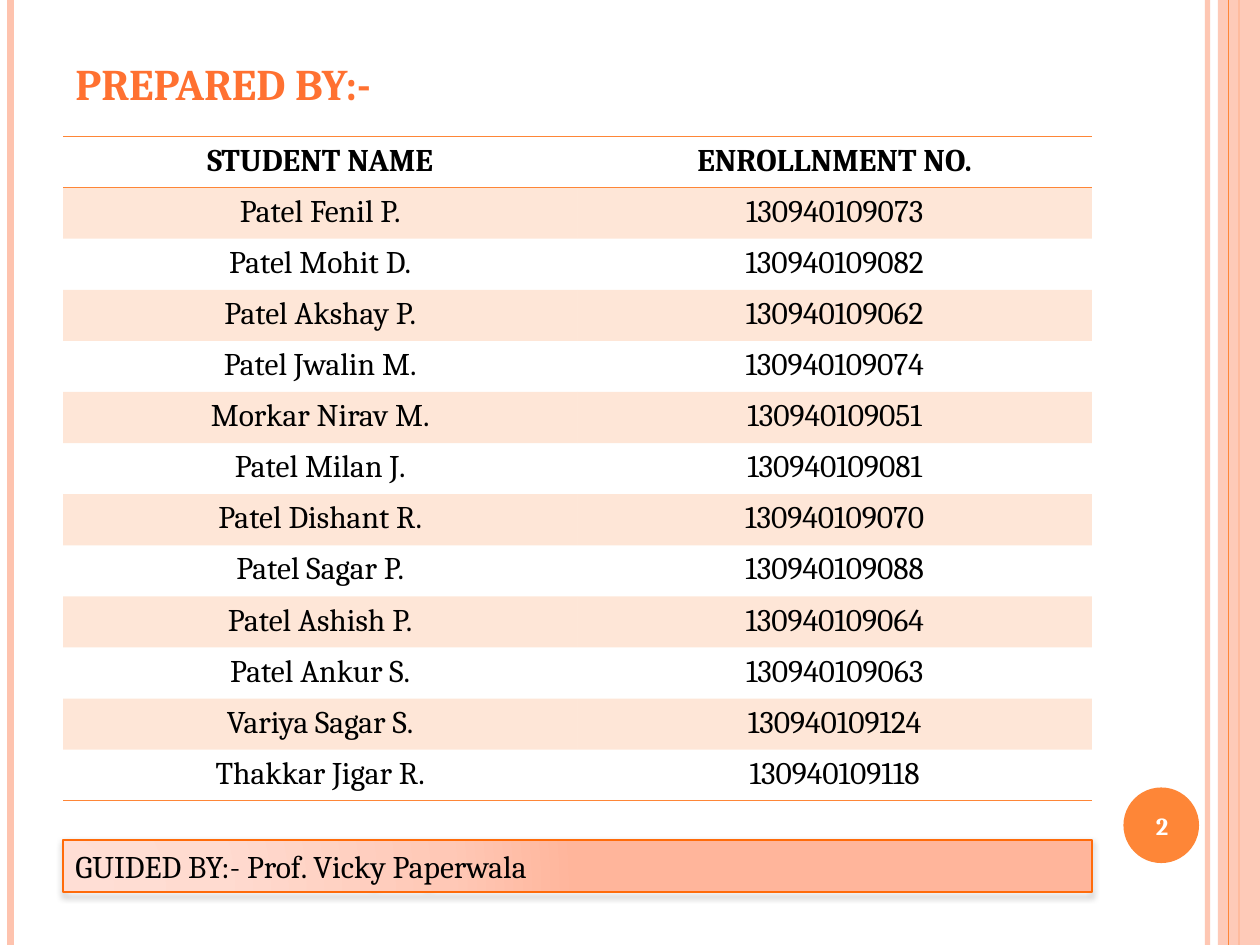
from dataclasses import dataclass

from lxml import etree
from pptx import Presentation
from pptx.dml.color import RGBColor
from pptx.enum.shapes import MSO_CONNECTOR, MSO_SHAPE
from pptx.enum.text import MSO_ANCHOR, PP_ALIGN
from pptx.oxml import parse_xml
from pptx.oxml.ns import qn
from pptx.util import Pt

RECT, OVAL = MSO_SHAPE.RECTANGLE, MSO_SHAPE.OVAL
LINE = MSO_CONNECTOR.STRAIGHT
LEFT, CENTER = PP_ALIGN.LEFT, PP_ALIGN.CENTER
MIDDLE, BOTTOM = MSO_ANCHOR.MIDDLE, MSO_ANCHOR.BOTTOM
NS = "http://schemas.openxmlformats.org/drawingml/2006/main"
PLAIN = "{2D5ABB26-0587-4C30-8999-92F81FD0307C}"  # no style, no grid


@dataclass(frozen=True)
class Theme:
    font: str = "Cambria"
    accent: str = "FE8637"
    pale: str = "FEC3AE"
    title: str = "FF7131"
    edge: str = "FF6B0A"
    black: str = "000000"
    white: str = "FFFFFF"
    blend: tuple = ((0, "FFDED5"), (30, "FFDBD0"), (75, "FFC8B6"), (100, "FFB59B"))
    head: int = 25
    body: int = 18
    small: int = 14


T = Theme()
WIDE, HIGH = 720, 540
EDGE, SPAN = 36, 588  # left margin and width of the content

HEADS = ("STUDENT NAME", "ENROLLNMENT NO.")
PUPILS = (
    ("Patel Fenil P.", "130940109073"),
    ("Patel Mohit D.", "130940109082"),
    ("Patel Akshay P.", "130940109062"),
    ("Patel Jwalin M.", "130940109074"),
    ("Morkar Nirav M.", "130940109051"),
    ("Patel Milan J.", "130940109081"),
    ("Patel Dishant R.", "130940109070"),
    ("Patel Sagar P.", "130940109088"),
    ("Patel Ashish P.", "130940109064"),
    ("Patel Ankur S.", "130940109063"),
    ("Variya Sagar S.", "130940109124"),
    ("Thakkar Jigar R.", "130940109118"),
)


def box(*nums):
    return [Pt(n) for n in nums]


def paint(fill, color, alpha=100):
    fill.solid()
    fill.fore_color.rgb = RGBColor.from_string(color)
    if alpha < 100:
        node = fill._xPr.find(f".//{{{NS}}}srgbClr")
        etree.SubElement(node, qn("a:alpha"), val=str(alpha * 1000))


def write(frame, text, size, color, align=LEFT, bold=False):
    frame.word_wrap = True
    para = frame.paragraphs[0]
    para.text = text
    para.alignment = align
    font = para.font
    font.name, font.size, font.bold = T.font, Pt(size), bold
    font.color.rgb = RGBColor.from_string(color)


def label(slide, area, text, size, color, anchor, align=LEFT):
    frame = slide.shapes.add_textbox(*box(*area)).text_frame
    frame.vertical_anchor = anchor
    write(frame, text, size, color, align, True)


def stripe(slide, x, color, width, alpha=100):
    line = slide.shapes.add_connector(LINE, *box(x, 0, x, HIGH))
    line.line.width = Pt(width)
    paint(line.line.fill, color, alpha)
    etree.SubElement(line._element.spPr, qn("a:effectLst"))


def block(slide, kind, area, color, alpha=100):
    shape = slide.shapes.add_shape(kind, *box(*area))
    paint(shape.fill, color, alpha)
    shape.line.fill.background()
    shape.shadow.inherit = False
    return shape


def rule(cell, *sides):
    props = cell._tc.get_or_add_tcPr()
    for spot, side in enumerate(sides):
        props.insert(spot, parse_xml(
            f'<a:{side} xmlns:a="{NS}" w="12700"><a:solidFill>'
            f'<a:srgbClr val="{T.accent}"/></a:solidFill></a:{side}>'))


def roster(slide, top, height):
    rows = (HEADS,) + PUPILS
    frame = slide.shapes.add_table(len(rows), 2, *box(EDGE, top, SPAN, height))
    table = frame.table
    table.first_row = table.horz_banding = False
    table._tbl.tblPr.find(qn("a:tableStyleId")).text = PLAIN
    for r, row in enumerate(rows):
        table.rows[r].height = Pt(height / len(rows))
        for c, text in enumerate(row):
            cell = table.cell(r, c)
            write(cell.text_frame, text, T.body, T.black, CENTER, r == 0)
            if r % 2:
                paint(cell.fill, T.accent, 20)
            else:
                cell.fill.background()
            if r == 0:
                rule(cell, "lnT", "lnB")
            elif r == len(rows) - 1:
                rule(cell, "lnB")


def banner(slide, area, text):
    shape = block(slide, RECT, area, T.pale)
    shape.line.width = Pt(1)
    paint(shape.line.fill, T.edge)
    # Radial blend
    stops = "".join(f'<a:gs pos="{at * 1000}"><a:srgbClr val="{color}"/></a:gs>'
                    for at, color in T.blend)
    props = shape._element.spPr
    props.replace(props.find(qn("a:solidFill")), parse_xml(
        f'<a:gradFill xmlns:a="{NS}"><a:gsLst>{stops}</a:gsLst><a:path path="circle">'
        '<a:fillToRect l="5000" t="100000" r="120000" b="10000"/></a:path></a:gradFill>'))
    # Soft drop shadow
    props.find(qn("a:effectLst")).append(parse_xml(
        f'<a:outerShdw xmlns:a="{NS}" blurRad="{Pt(4)}" dist="{Pt(2)}" dir="5400000" '
        f'rotWithShape="0"><a:srgbClr val="{T.black}"><a:alpha val="40000"/>'
        '</a:srgbClr></a:outerShdw>'))
    shape.text_frame.vertical_anchor = MIDDLE
    write(shape.text_frame, text, T.body, T.black)


def main():
    deck = Presentation()
    deck.slide_width, deck.slide_height = box(WIDE, HIGH)
    slide = deck.slides.add_slide(deck.slide_layouts[6])

    # Side stripes and number disc
    stripe(slide, 690, T.pale, 3, 93)
    stripe(slide, 6, T.pale, 4.5)
    stripe(slide, 708, T.accent, 1.5)
    block(slide, RECT, (696, 0, 24, HIGH), T.pale, 87)
    stripe(slide, 702, T.accent, 0.75)
    block(slide, OVAL, (642, 450, 43.2, 43.2), T.accent)

    # Content
    label(slide, (EDGE, 21.6, SPAN, 44.4), "PREPARED BY:-", T.head, T.title, BOTTOM)
    label(slide, (640, 451.4, 48, 41), "2", T.small, T.white, MIDDLE, CENTER)
    roster(slide, 78, 379.6)
    banner(slide, (EDGE, 480, SPAN, 30), "GUIDED BY:- Prof. Vicky Paperwala")

    deck.save("out.pptx")


if __name__ == "__main__":
    main()
